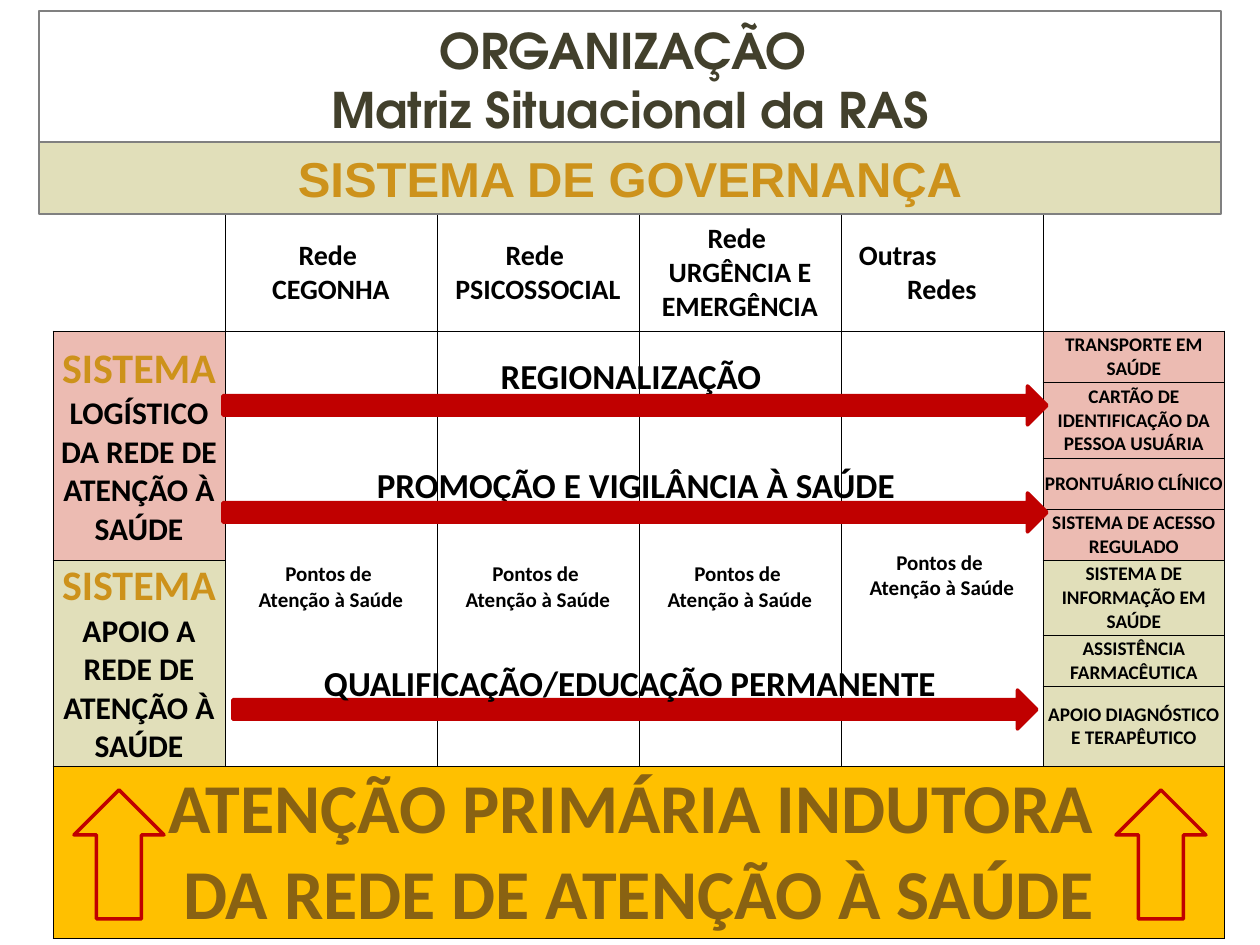
"""Build the situational matrix slide of the health care network."""
from dataclasses import dataclass
from typing import Optional

from lxml.etree import SubElement
from pptx import Presentation
from pptx.dml.color import RGBColor
from pptx.enum.shapes import MSO_SHAPE
from pptx.enum.text import MSO_ANCHOR, PP_ALIGN
from pptx.oxml.ns import qn
from pptx.util import Emu, Pt

C = {"white": "FFFFFF", "black": "000000", "grey": "808080", "olive": "42402C",
     "gold": "CD921B", "brown": "896212", "amber": "FFC000", "red": "C00000",
     "pink": "ECBBB2", "sage": "E1DFBA"}
EMU_PER_PX = 914400 / 126
COLS = [172, 212, 202, 202, 202, 182]
ROWS = [117, 51, 76, 51, 51, 75, 51, 80, 172]


@dataclass
class Run:
    text: str
    size: float
    color: str = "black"
    name: str = "Calibri"


@dataclass
class Cell:
    row: int
    col: int
    paras: list[list[Run]]
    fill: Optional[str] = None
    rows: int = 1
    cols: int = 1
    top: int = 1


@dataclass
class Item:
    kind: Optional[MSO_SHAPE]
    box: tuple[int, int, int, int]
    fill: Optional[str] = None
    line: Optional[str] = None
    width: float = 2
    run: Optional[Run] = None


def px(n: float) -> Emu:
    return Emu(round(n * EMU_PER_PX))


def rgb(name: str) -> RGBColor:
    return RGBColor.from_string(C[name])


def assign(obj, values: dict) -> None:
    for key, value in values.items():
        setattr(obj, key, value)


def place(sp, box: tuple[int, int, int, int]) -> None:
    assign(sp, dict(zip(("left", "top", "width", "height"), map(px, box))))


def write(tf, paras: list[list[Run]]) -> None:
    for i, runs in enumerate(paras):
        p = tf.paragraphs[0] if i == 0 else tf.add_paragraph()
        p.alignment = PP_ALIGN.CENTER
        for run in runs:
            r = p.add_run()
            r.text = run.text
            assign(r.font, {"size": Pt(run.size), "bold": True, "name": run.name})
            r.font.color.rgb = rgb(run.color)


def paint(sp, fill: str, line: str, width: float) -> None:
    sp.fill.solid()
    sp.fill.fore_color.rgb = rgb(fill)
    sp.line.color.rgb = rgb(line)
    sp.line.width = Pt(width)


def draw_item(s, item: Item) -> None:
    box = [px(n) for n in item.box]
    if item.kind is None:
        sp = s.shapes.add_textbox(*box)
    else:
        sp = s.shapes.add_shape(item.kind, *box)
        sp.shadow.inherit = False
        paint(sp, item.fill, item.line, item.width)
    if item.run:
        sp.text_frame.word_wrap = True
        write(sp.text_frame, [[item.run]])


def set_borders(cell, sides: str) -> None:
    pr = cell._tc.get_or_add_tcPr()
    for i, side in enumerate("LRTB"):
        ln = pr.makeelement(qn(f"a:ln{side}"), {"w": "6350"})
        pr.insert(i, ln)
        if side in sides:
            fill = SubElement(ln, qn("a:solidFill"))
            SubElement(fill, qn("a:srgbClr"), val=C["black"])
        else:
            SubElement(ln, qn("a:noFill"))


def draw_table(s, cells: list[Cell]) -> None:
    shape = s.shapes.add_table(len(ROWS), len(COLS), px(53), px(214),
                               px(sum(COLS)), px(sum(ROWS)))
    tbl = shape.table
    assign(tbl, {"first_row": False, "horz_banding": False})
    for col, w in zip(tbl.columns, COLS):
        col.width = px(w)
    for row, h in zip(tbl.rows, ROWS):
        row.height = px(h)
    corners = {(0, 0): "RB", (0, len(COLS) - 1): "LB"}
    for i in range(len(ROWS)):
        for j in range(len(COLS)):
            cell = tbl.cell(i, j)
            assign(cell, {"margin_left": px(1), "margin_right": px(1), "margin_top": px(1),
                          "margin_bottom": 0, "vertical_anchor": MSO_ANCHOR.MIDDLE})
            cell.fill.background()
            set_borders(cell, corners.get((i, j), "LRTB"))
    for c in cells:
        cell = tbl.cell(c.row, c.col)
        if c.rows * c.cols > 1:
            cell.merge(tbl.cell(c.row + c.rows - 1, c.col + c.cols - 1))
        cell.margin_top = px(c.top)
        if c.fill:
            cell.fill.solid()
            cell.fill.fore_color.rgb = rgb(c.fill)
        write(cell.text_frame, c.paras)
    first = tbl.cell(0, 4).text_frame.paragraphs[0]
    first.alignment = PP_ALIGN.LEFT
    first._p.get_or_add_pPr().set("marL", str(px(17)))


def matrix_cells() -> list[Cell]:
    networks = [("Rede ", "CEGONHA"), ("Rede ", "PSICOSSOCIAL"),
                ("Rede ", "URGÊNCIA E EMERGÊNCIA"), ("Outras", "Redes")]
    systems = [(1, 4, "pink", " LOGÍSTICO DA REDE DE ATENÇÃO À SAÚDE"),
               (5, 3, "sage", " APOIO A REDE DE ATENÇÃO À SAÚDE")]
    services = ["TRANSPORTE EM SAÚDE", "CARTÃO DE IDENTIFICAÇÃO DA PESSOA USUÁRIA",
                "PRONTUÁRIO CLÍNICO", "SISTEMA DE ACESSO REGULADO",
                "SISTEMA DE INFORMAÇÃO EM SAÚDE", "ASSISTÊNCIA FARMACÊUTICA",
                "APOIO DIAGNÓSTICO E TERAPÊUTICO"]
    points = [[Run("Pontos de ", 12)], [Run("Atenção à Saúde", 12)]]
    cells = []
    for j, names in enumerate(networks, 1):
        cells.append(Cell(0, j, [[Run(n, 16)] for n in names], "white"))
        cells.append(Cell(1, j, points, rows=7, top=55 if j == 4 else 78))
    for row, rows, fill, text in systems:
        runs = [Run("SISTEMA", 24, "gold"), Run(text, 18)]
        cells.append(Cell(row, 0, [runs], fill, rows))
    for i, text in enumerate(services, 1):
        cells.append(Cell(i, 5, [[Run(text, 11)]], "pink" if i < 5 else "sage"))
    base = ["ATENÇÃO PRIMÁRIA INDUTORA ", "DA REDE DE ATENÇÃO À SAÚDE"]
    cells.append(Cell(8, 0, [[Run(t, 40, "brown")] for t in base], "amber", cols=6))
    return cells


def overlay_items() -> list[Item]:
    def arrow(x: int, y: int, w: int) -> Item:
        return Item(MSO_SHAPE.RIGHT_ARROW, (x, y, w, 39), "red", "red")

    def label(x: int, y: int, w: int, text: str) -> Item:
        return Item(None, (x, y, w, 55), run=Run(text, 20))

    return [
        Item(MSO_SHAPE.RECTANGLE, (39, 142, 1182, 72), "sage", "grey", 0.75,
             Run("SISTEMA DE GOVERNANÇA", 28, "gold", "Arial")),
        arrow(233, 690, 804),
        label(282, 655, 704, "QUALIFICAÇÃO/EDUCAÇÃO PERMANENTE "),
        label(343, 457, 586, "PROMOÇÃO E VIGILÂNCIA À SAÚDE"),
        arrow(223, 493, 824),
        label(391, 348, 488, "REGIONALIZAÇÃO "),
        arrow(223, 386, 824),
        *(Item(MSO_SHAPE.UP_ARROW, (x, 790, 90, 129), "amber", "red") for x in (74, 1116)),
    ]


def main() -> None:
    prs = Presentation()
    assign(prs, {"slide_width": px(1260), "slide_height": px(945)})
    s = prs.slides.add_slide(prs.slide_layouts[5])
    title = s.shapes.title
    place(title, (39, 11, 1182, 136))
    paint(title, "white", "grey", 0.75)
    title.text_frame.vertical_anchor = MSO_ANCHOR.MIDDLE
    write(title.text_frame, [[Run(t, 28, "olive", "TeX Gyre Adventor")]
                             for t in ("ORGANIZAÇÃO ", "Matriz Situacional da RAS")])
    draw_table(s, matrix_cells())
    for item in overlay_items():
        draw_item(s, item)
    prs.save("out.pptx")


if __name__ == "__main__":
    main()
